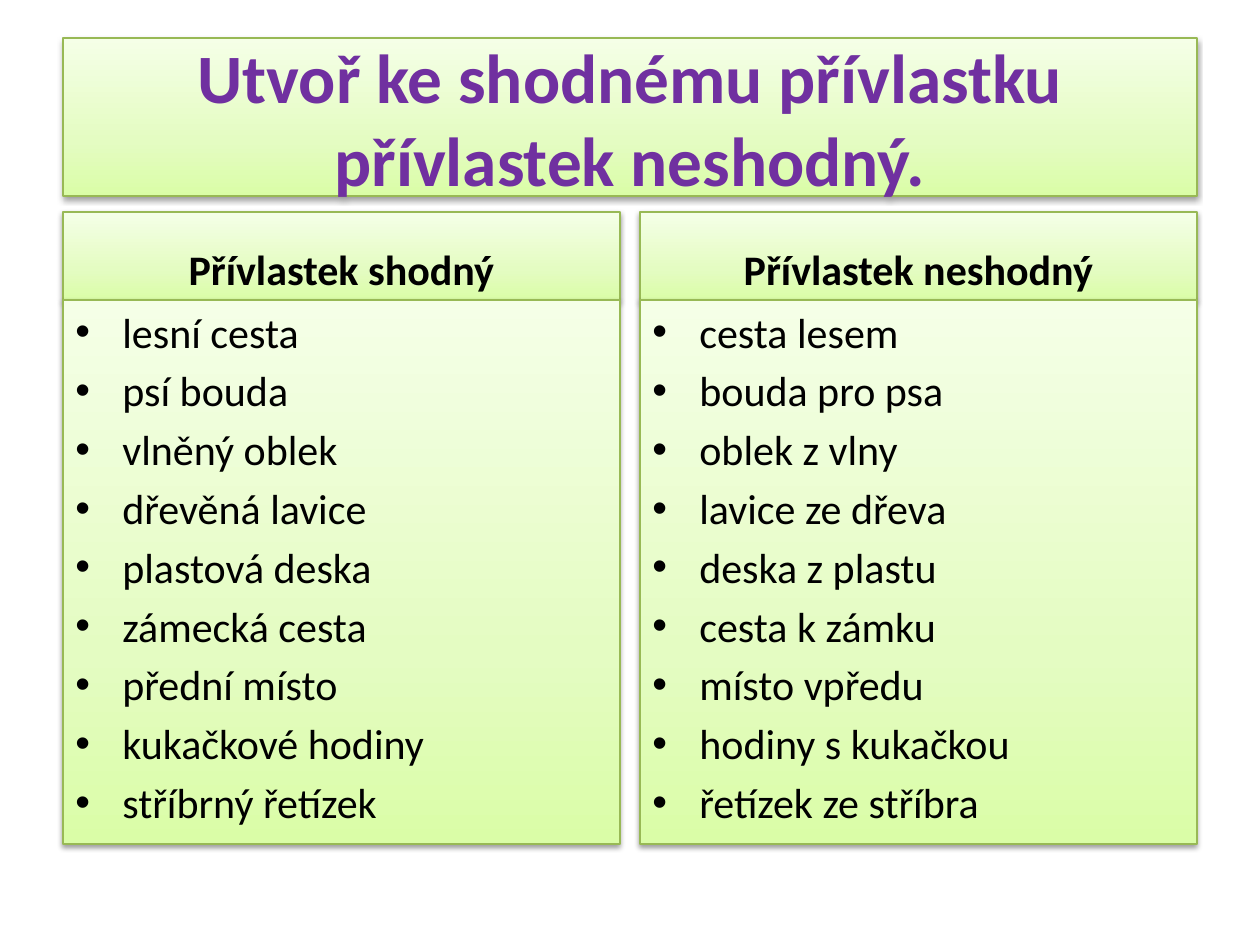
from lxml import etree
from pptx import Presentation
from pptx.dml.color import RGBColor
from pptx.enum.shapes import MSO_SHAPE
from pptx.enum.text import MSO_ANCHOR, PP_ALIGN
from pptx.oxml.ns import qn
from pptx.util import Emu, Pt

RECT = MSO_SHAPE.RECTANGLE
TOP, MIDDLE, BOTTOM = MSO_ANCHOR.TOP, MSO_ANCHOR.MIDDLE, MSO_ANCHOR.BOTTOM
LEFT, CENTER = PP_ALIGN.LEFT, PP_ALIGN.CENTER
FONT = "Calibri"
STOPS = [(0, "DAFDA7"), (35, "E4FCC2"), (100, "F5FFE7")]
TITLE = "Utvoř ke shodnému přívlastku přívlastek neshodný."
COLUMNS = [
    ("Přívlastek shodný",
     ["lesní cesta", "psí bouda", "vlněný oblek", "dřevěná lavice",
      "plastová deska", "zámecká cesta", "přední místo",
      "kukačkové hodiny", "stříbrný řetízek"]),
    ("Přívlastek neshodný",
     ["cesta lesem", "bouda pro psa", "oblek z vlny", "lavice ze dřeva",
      "deska z plastu", "cesta k zámku", "místo vpředu",
      "hodiny s kukačkou", "řetízek ze stříbra"]),
]


def px(n):
    """Turn pixels into EMU."""
    return Emu(round(n * 914400 / 126))


def color(hex_text):
    """Turn a hex string into a colour."""
    return RGBColor.from_string(hex_text)


def add(parent, tag, **attrs):
    """Append a DrawingML element with its attributes."""
    return etree.SubElement(parent, qn(tag), {k: str(v) for k, v in attrs.items()})


def add_panel(s, x, y, w, h, anchor):
    """Add a green gradient panel with a soft shadow and return its text frame."""
    sp = s.shapes.add_shape(RECT, px(x), px(y), px(w), px(h))
    props = sp._element.spPr
    grad = add(props, "a:gradFill", rotWithShape=1)
    stops = add(grad, "a:gsLst")
    for pos, value in STOPS:
        add(add(stops, "a:gs", pos=pos * 1000), "a:srgbClr", val=value)
    add(grad, "a:lin", ang=270 * 60000, scaled=0)
    sp.line.color.rgb = color("98B955")
    sp.line.width = Pt(0.75)
    sp.shadow.inherit = False
    shadow = add(props.find(qn("a:effectLst")), "a:outerShdw", blurRad=Pt(3.1),
                 dist=Pt(1.6), dir=90 * 60000, rotWithShape=0)
    add(add(shadow, "a:srgbClr", val="000000"), "a:alpha", val=38000)
    tf = sp.text_frame
    tf.word_wrap = True
    tf.vertical_anchor = anchor
    return tf


def add_text(p, text, size=24, fill="000000", bold=False, align=CENTER,
             before=0, bullet=False):
    """Write formatted text into a paragraph."""
    p.alignment = align
    pPr = p._p.get_or_add_pPr()
    if before:
        add(add(pPr, "a:spcBef"), "a:spcPct", val=before * 1000)
    if bullet:
        pPr.set("marL", str(px(47)))
        pPr.set("indent", str(-px(47)))
        add(pPr, "a:buFont", typeface="Arial")
        add(pPr, "a:buChar", char="•")
    r = p.add_run()
    r.text = text
    r.font.name = FONT
    r.font.size = Pt(size)
    r.font.bold = bold
    r.font.color.rgb = color(fill)


def add_title(s, x, y, w, h):
    """Place the title panel."""
    tf = add_panel(s, x, y, w, h, MIDDLE)
    add_text(tf.paragraphs[0], TITLE, size=39.6, fill="7030A0", bold=True)


def add_column(s, x, y, w, h, heading, items):
    """Place a heading panel with a bulleted list panel under it."""
    head_h = 88
    tf = add_panel(s, x, y, w, head_h, BOTTOM)
    add_text(tf.paragraphs[0], heading, bold=True, before=20)
    tf = add_panel(s, x, y + head_h, w, h - head_h, TOP)
    for i, item in enumerate(items):
        p = tf.add_paragraph() if i else tf.paragraphs[0]
        add_text(p, item, align=LEFT, before=20, bullet=True)


def main():
    """Build and save the slide."""
    prs = Presentation()
    prs.slide_width, prs.slide_height = px(1260), px(945)
    s = prs.slides.add_slide(prs.slide_layouts[6])
    margin, width, gap = 63, 1134, 20
    add_title(s, margin, 38, width, 158)
    col_w = (width - gap) // 2
    for i, (heading, items) in enumerate(COLUMNS):
        add_column(s, margin + i * (col_w + gap), 212, col_w, 632, heading, items)
    prs.save("out.pptx")


if __name__ == "__main__":
    main()
